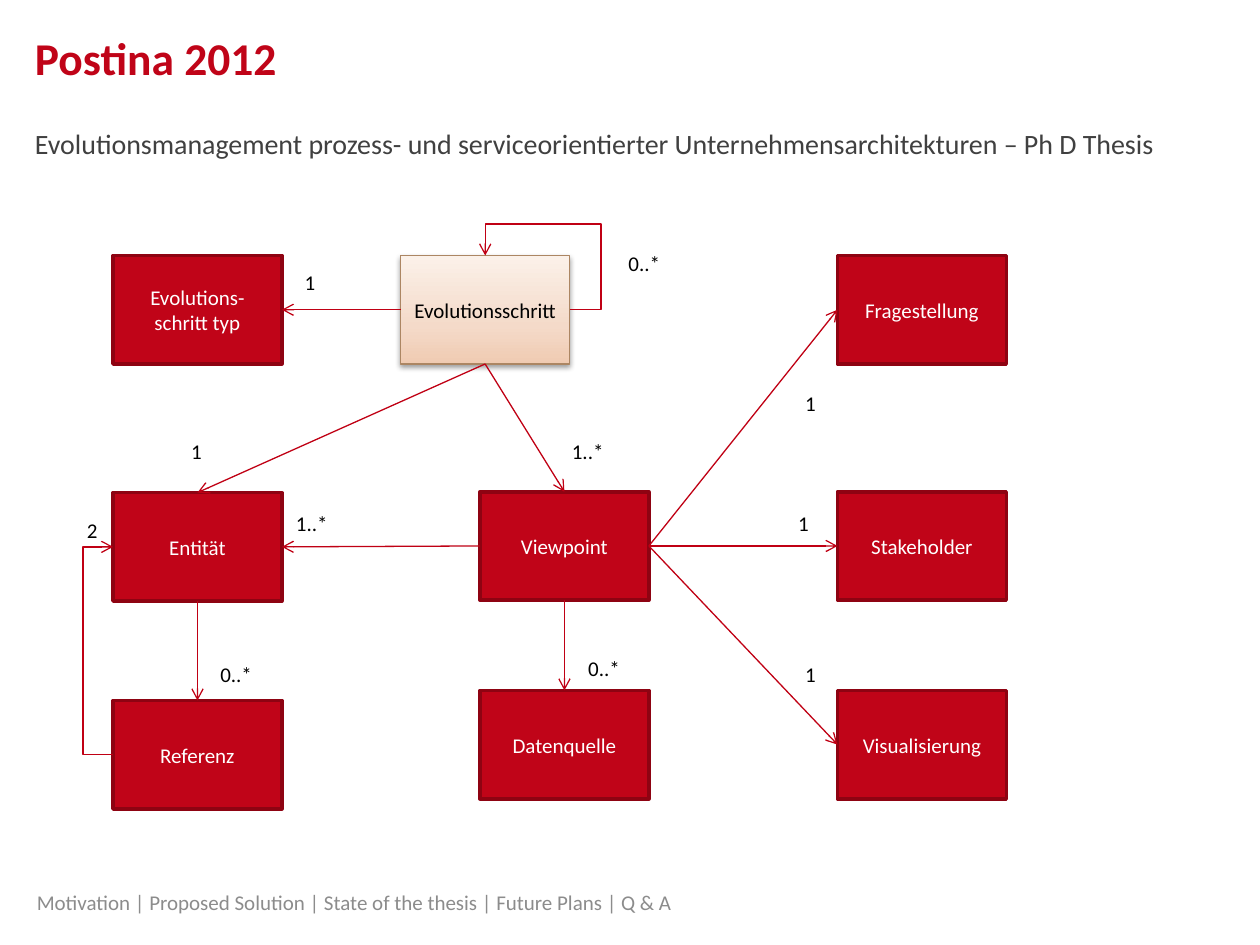
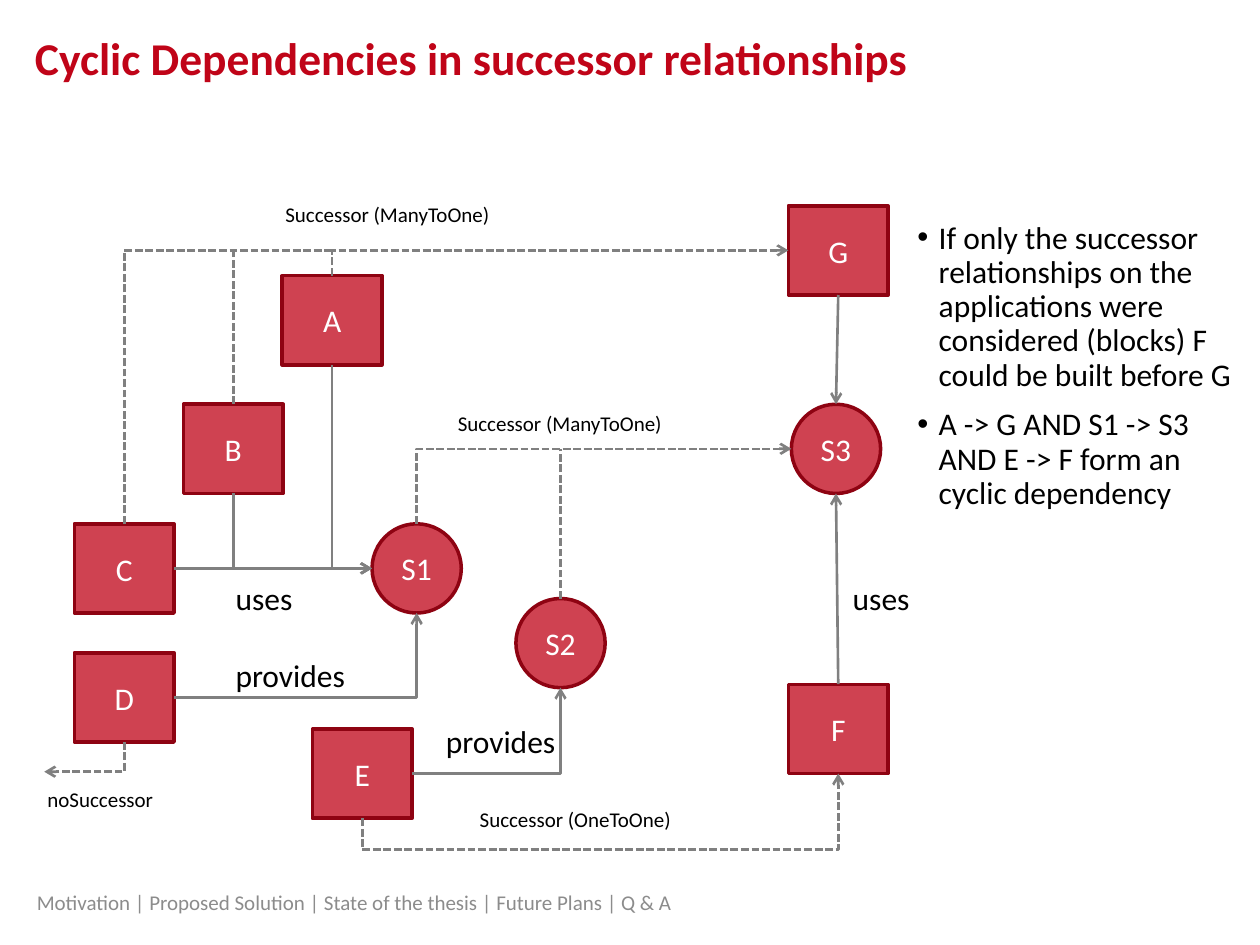
"""Build two slides with dependency diagrams of an evolution model."""
from dataclasses import dataclass
from typing import Optional

from lxml import etree
from pptx import Presentation
from pptx.dml.color import RGBColor
from pptx.enum.dml import MSO_LINE
from pptx.enum.shapes import MSO_CONNECTOR, MSO_SHAPE
from pptx.enum.text import MSO_ANCHOR, PP_ALIGN
from pptx.oxml.ns import qn
from pptx.util import Pt

RECTANGLE, OVAL = MSO_SHAPE.RECTANGLE, MSO_SHAPE.OVAL
STRAIGHT = MSO_CONNECTOR.STRAIGHT
SHORT_DASH = MSO_LINE.SQUARE_DOT
TOP, MIDDLE = MSO_ANCHOR.TOP, MSO_ANCHOR.MIDDLE
LEFT, CENTER = PP_ALIGN.LEFT, PP_ALIGN.CENTER

RED = RGBColor(0xC0, 0x04, 0x18)
ARROW_RED = RGBColor(0xC0, 0x00, 0x14)
DARK_RED = RGBColor(0x8E, 0x03, 0x12)
BROWN = RGBColor(0xAC, 0x86, 0x63)
GRAY = RGBColor(0x80, 0x80, 0x80)
FOOTER_GRAY = RGBColor(0x8C, 0x8C, 0x8C)
SUBTITLE_GRAY = RGBColor(0x40, 0x40, 0x40)
BLACK = RGBColor(0, 0, 0)
WHITE = RGBColor(0xFF, 0xFF, 0xFF)
PEACH, LIGHT_PEACH, CREAM = RGBColor(0xF0, 0xCB, 0xB2), RGBColor(0xF4, 0xDA, 0xC9), RGBColor(0xFB, 0xF1, 0xE9)
PEACH_STOPS = ((0, PEACH), (35, LIGHT_PEACH), (100, CREAM))

FONT = "Calibri"
FOOTER = "Motivation | Proposed Solution | State of the thesis | Future Plans | Q & A"
NO_INSETS = (0, 0, 0, 0)
LABEL_INSETS = (7.2, 3.6, 7.2, 3.6)
Point = tuple[float, float]


@dataclass(frozen=True)
class Node:
    """A labelled block or circle with connection points on its sides."""
    text: str
    left: float
    top: float
    width: float
    height: float
    outline: MSO_SHAPE = RECTANGLE

    @property
    def north(self) -> Point:
        return self.left + self.width / 2, self.top

    @property
    def south(self) -> Point:
        return self.left + self.width / 2, self.top + self.height

    @property
    def west(self) -> Point:
        return self.left, self.top + self.height / 2

    @property
    def east(self) -> Point:
        return self.left + self.width, self.top + self.height / 2


@dataclass(frozen=True)
class Route:
    """A line through points, with or without an arrowhead and dashes."""
    points: tuple[Point, ...]
    dashed: bool = False
    arrow: bool = True


@dataclass(frozen=True)
class Label:
    """A short text beside a route."""
    text: str
    left: float
    top: float
    width: float = 51
    size: float = 12


def add_xml(parent, tag: str, **attributes: str):
    """Append a drawing element and return it."""
    return etree.SubElement(parent, qn(tag), attributes)


def add_run(paragraph, text: str, size: float, color: RGBColor, bold: bool = False) -> None:
    """Add one formatted run."""
    run = paragraph.add_run()
    run.text = text
    run.font.name, run.font.size, run.font.bold = FONT, Pt(size), bold
    run.font.color.rgb = color


def set_frame(frame, insets: tuple, anchor: MSO_ANCHOR, wrap: bool = True) -> None:
    """Set the margins, anchor and wrapping of a text frame."""
    frame.margin_left, frame.margin_top, frame.margin_right, frame.margin_bottom = map(Pt, insets)
    frame.vertical_anchor, frame.word_wrap = anchor, wrap


def add_text(slide, text: str, box: tuple, size: float, color: RGBColor, insets: tuple = NO_INSETS,
             anchor: MSO_ANCHOR = TOP, wrap: bool = True, bold: bool = False):
    """Add a text box of one paragraph and return the paragraph."""
    frame = slide.shapes.add_textbox(*map(Pt, box)).text_frame
    set_frame(frame, insets, anchor, wrap)
    paragraph = frame.paragraphs[0]
    paragraph.alignment = LEFT
    add_run(paragraph, text, size, color, bold)
    return paragraph


def add_node(slide, node: Node, size: float, opacity: int = 100, highlighted: bool = False) -> None:
    """Draw a node in red, or in peach with a shadow when highlighted."""
    shape = slide.shapes.add_shape(node.outline, *map(Pt, (node.left, node.top, node.width, node.height)))
    shape.shadow.inherit = False
    properties = shape._element.spPr
    shape.line.color.rgb = BROWN if highlighted else DARK_RED
    shape.line.width = Pt(0.75 if highlighted else 2)
    if highlighted:
        shape.fill.gradient()
        shape.fill.gradient_angle = 90
        stops = properties.find(".//" + qn("a:gsLst"))
        for stop in list(stops):
            stops.remove(stop)
        for position, color in PEACH_STOPS:
            add_xml(add_xml(stops, "a:gs", pos=str(position * 1000)), "a:srgbClr", val=str(color))
        shadow = add_xml(properties.find(qn("a:effectLst")), "a:outerShdw", blurRad=str(Pt(3.1)),
                         dist=str(Pt(1.6)), dir="5400000", rotWithShape="0")
        add_xml(add_xml(shadow, "a:srgbClr", val=str(BLACK)), "a:alpha", val="38000")
    else:
        shape.fill.solid()
        shape.fill.fore_color.rgb = RED
        if opacity < 100:
            color = properties.find(qn("a:solidFill")).find(qn("a:srgbClr"))
            add_xml(color, "a:alpha", val=str(opacity * 1000))
    set_frame(shape.text_frame, LABEL_INSETS, MIDDLE)
    paragraph = shape.text_frame.paragraphs[0]
    paragraph.alignment = CENTER
    add_run(paragraph, node.text, size, BLACK if highlighted else WHITE)


def add_route(slide, route: Route, color: RGBColor, width: float) -> None:
    """Draw a straight connector, or one open outline for a bent route."""
    points = [(Pt(x), Pt(y)) for x, y in route.points]
    if len(points) == 2:
        line = slide.shapes.add_connector(STRAIGHT, *points[0], *points[1])
        add_xml(line._element.spPr, "a:effectLst")
    else:
        builder = slide.shapes.build_freeform(*points[0])
        builder.add_line_segments(points[1:], close=False)
        line = builder.convert_to_shape()
        line.fill.background()
        line.shadow.inherit = False
    line.line.color.rgb, line.line.width = color, Pt(width)
    if route.dashed:
        line.line.dash_style = SHORT_DASH
    if route.arrow:
        add_xml(line.line._get_or_add_ln(), "a:tailEnd", type="arrow")


def add_label(slide, label: Label) -> None:
    """Write a label beside a route."""
    box = (label.left, label.top, label.width, label.size * 1.2 + 7.2)
    add_text(slide, label.text, box, label.size, BLACK, LABEL_INSETS)


def add_base(presentation, title: str):
    """Add a blank slide with the shared title and footer."""
    slide = presentation.slides.add_slide(presentation.slide_layouts[6])
    add_text(slide, title, (20, 17.3, 676, 42.5), 26, RED, bold=True)
    add_text(slide, FOOTER, (21, 507.5, 541.5, 16.5), 12, FOOTER_GRAY, (0, 5.8, 0, 5.8), MIDDLE, False)
    return slide


def corner(start: Point, end: Point, across_first: bool) -> tuple[Point, Point, Point]:
    """Return a path with one right-angled corner."""
    bend = (end[0], start[1]) if across_first else (start[0], end[1])
    return start, bend, end


def build_evolution_model(presentation) -> None:
    """Draw the class diagram of the thesis."""
    slide = add_base(presentation, "Postina 2012")
    subtitle = add_text(
        slide, "Evolutionsmanagement prozess- und serviceorientierter Unternehmensarchitekturen – Ph D Thesis",
        (20, 72, 676, 36), 16, SUBTITLE_GRAY, wrap=False)
    subtitle.line_spacing, subtitle.space_after = Pt(19.5), Pt(3)

    size = (96.5, 62)
    entities_x, sources_x, aspects_x = 64.6, 274.3, 478.6
    steps_y, views_y, data_y = 146, 281, 394.5
    step = Node("Evolutionsschritt", 229, steps_y, *size)
    step_type = Node("Evolutions-schritt typ", entities_x, steps_y, *size)
    entity = Node("Entität", entities_x, views_y + 0.5, *size)
    reference = Node("Referenz", entities_x, 400.3, *size)
    viewpoint = Node("Viewpoint", sources_x, views_y, *size)
    source = Node("Datenquelle", sources_x, data_y, *size)
    question = Node("Fragestellung", aspects_x, steps_y, *size)
    stakeholder = Node("Stakeholder", aspects_x, views_y, *size)
    visualization = Node("Visualisierung", aspects_x, data_y, *size)

    add_node(slide, step, 12, highlighted=True)
    for node in (step_type, entity, reference, viewpoint, source, question, stakeholder, visualization):
        add_node(slide, node, 12)

    loop_x, loop_y, return_x = 343.5, 128, 47.5
    paths = (
        (viewpoint.south, source.north),
        (step.south, entity.north),
        (step.west, step_type.east),
        (step.east, (loop_x, step.east[1]), (loop_x, loop_y), (step.north[0], loop_y), step.north),
        (reference.west, (return_x, reference.west[1]), (return_x, entity.west[1]), entity.west),
        (entity.south, reference.north),
        (viewpoint.west, entity.east),
        (step.south, viewpoint.north),
        *((viewpoint.east, aspect.west) for aspect in (question, stakeholder, visualization)),
    )
    for path in paths:
        add_route(slide, Route(path), ARROW_RED, 0.75)

    for label in (
        Label("0..*", 329, 370.8), Label("1", 167, 150.5), Label("1", 453, 219.6),
        Label("1", 449, 288), Label("1", 453, 374.4), Label("0..*", 118.8, 374.4),
        Label("1", 102.2, 247), Label("2", 42.5, 292.3), Label("1..*", 162, 288),
        Label("1..*", 319.7, 247), Label("0..*", 352, 139.7),
    ):
        add_label(slide, label)


def add_bullets(slide, texts: tuple[str, ...], box: tuple) -> None:
    """Write a bulleted list."""
    frame = slide.shapes.add_textbox(*map(Pt, box)).text_frame
    set_frame(frame, NO_INSETS, TOP)
    for index, text in enumerate(texts):
        paragraph = frame.add_paragraph() if index else frame.paragraphs[0]
        properties = paragraph._p.get_or_add_pPr()
        properties.set("marL", str(Pt(12.2)))
        properties.set("indent", str(-Pt(12.2)))
        add_xml(properties, "a:buFont", typeface="Arial")
        add_xml(properties, "a:buChar", char="•")
        paragraph.line_spacing, paragraph.space_after = Pt(19.5), Pt(3)
        if index:
            paragraph.space_before = Pt(6)
        add_run(paragraph, text, 18, BLACK)


def build_cyclic_dependencies(presentation: Optional[object]) -> None:
    """Draw applications, services and their successors."""
    slide = add_base(presentation, "Cyclic Dependencies in successor relationships")
    block, circle = (57, 51), (51, 51, OVAL)
    a = Node("A", 161.3, 157.5, *block)
    b = Node("B", 104.8, 231, *block)
    c = Node("C", 42.5, 299.3, *block)
    d = Node("D", 42.5, 373, *block)
    e = Node("E", 178.5, 416.6, *block)
    f = Node("F", 450.5, 391, *block)
    g = Node("G", 450.5, 117.6, *block)
    s1 = Node("S1", 212.6, 299.3, *circle)
    s2 = Node("S2", 294.8, 342, *circle)
    s3 = Node("S3", 452.2, 231, *circle)
    for node in (a, b, c, d, e, f, g, s1, s2, s3):
        add_node(slide, node, 18, opacity=75)

    bus_y, service_y, below_y = g.west[1], s3.west[1], 485.5
    for route in (
        Route(corner(d.east, s1.south, True)),
        Route((c.east, s1.west)),
        Route(corner(b.south, s1.west, False)),
        Route(corner(a.south, s1.west, False)),
        Route((g.south, s3.north)),
        Route(corner(c.north, (a.north[0], bus_y), False), dashed=True, arrow=False),
        Route(corner(a.north, g.west, False), dashed=True),
        Route((b.north, (b.north[0], bus_y)), dashed=True, arrow=False),
        Route(corner(s1.north, s3.west, False), dashed=True),
        Route(corner(d.south, (25.3, 441), False), dashed=True),
        Route((s2.north, (s2.north[0], service_y)), dashed=True, arrow=False),
        Route(corner(e.east, s2.south, True)),
        Route((e.south, (e.south[0], below_y), (f.south[0], below_y), f.south), dashed=True),
        Route((f.north, s3.south)),
    ):
        add_route(slide, route, GRAY, 1.5)

    for label in (
        Label("provides", 127.5, 371.5, 85, 18), Label("uses", 127.5, 327.6, 85, 18),
        Label("provides", 247.7, 409, 85, 18), Label("uses", 480.2, 327.6, 50.4, 18),
        Label("Successor (ManyToOne)", 156, 111.6, 181.4), Label("Successor (ManyToOne)", 254.5, 231, 181.4),
        Label("noSuccessor", 20, 445.7, 181.4), Label("Successor (OneToOne)", 267, 457.2, 181.4),
    ):
        add_label(slide, label)
    add_bullets(slide, (
        "If only the successor relationships on the applications were considered (blocks) F could be built before G",
        "A -> G AND S1 -> S3 AND E -> F form an cyclic dependency",
    ), (524.2, 126.7, 181.4, 336))


def main() -> None:
    """Build and save the presentation."""
    presentation = Presentation()
    presentation.slide_width, presentation.slide_height = Pt(720), Pt(540)
    build_evolution_model(presentation)
    build_cyclic_dependencies(presentation)
    presentation.save("out.pptx")


if __name__ == "__main__":
    main()
